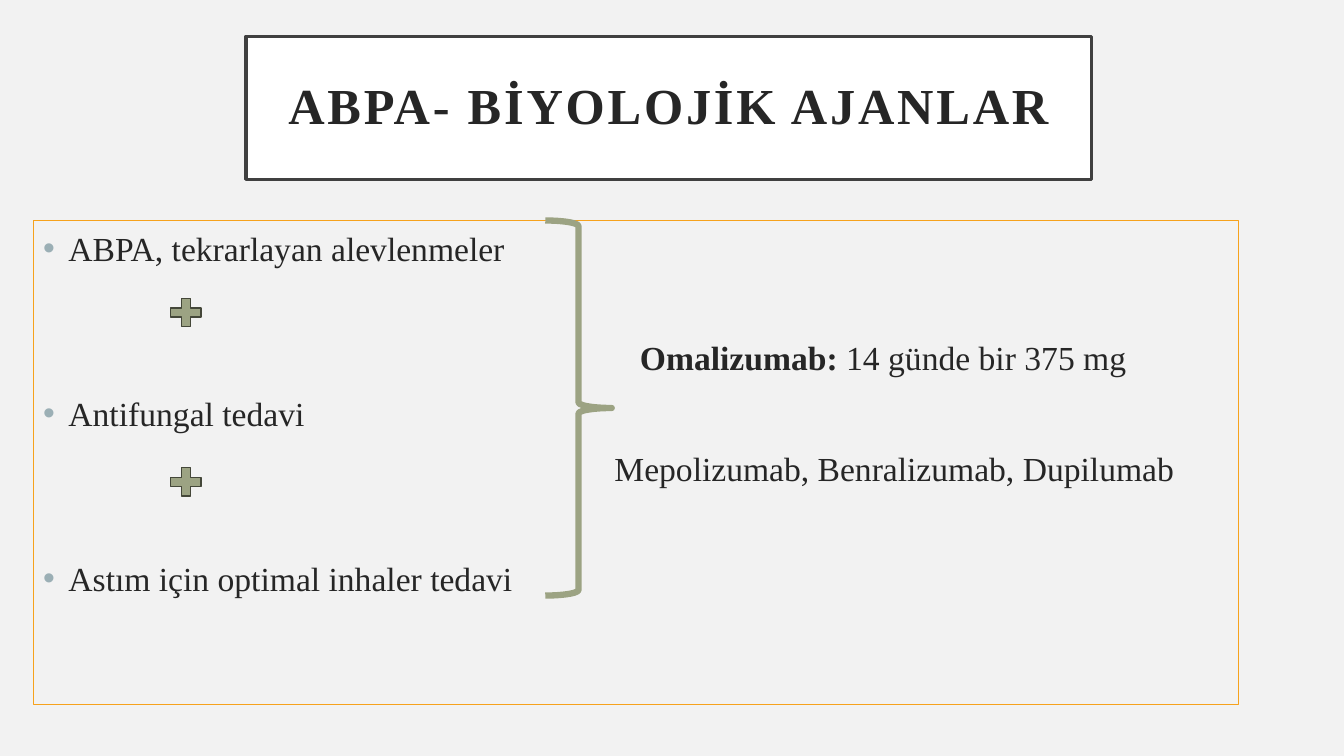
from lxml.etree import SubElement
from pptx import Presentation
from pptx.dml.color import RGBColor
from pptx.enum.shapes import MSO_SHAPE as SHAPE
from pptx.enum.text import MSO_ANCHOR as ANCHOR, PP_ALIGN as ALIGN
from pptx.oxml.ns import qn
from pptx.util import Pt

FONT = "Times New Roman"
COLORS = {
    "background": "F2F2F2", "white": "FFFFFF", "frame": "404040",
    "text": "262626", "orange": "F6A21D", "bullet": "9BAFB5",
    "sage": "9CA383", "olive": "444739",
}


def color(name):
    return RGBColor.from_string(COLORS[name])


def add_shape(s, kind, box, line, weight, fill=None):
    sp = s.shapes.add_shape(kind, *map(Pt, box))
    sp.shadow.inherit = False
    if fill:
        sp.fill.solid()
        sp.fill.fore_color.rgb = color(fill)
    else:
        sp.fill.background()
    sp.line.color.rgb = color(line)
    sp.line.width = Pt(weight)
    return sp


def set_frame(sp, insets, anchor=ANCHOR.TOP):
    tf = sp.text_frame
    tf.word_wrap = True
    tf.vertical_anchor = anchor
    tf.margin_left, tf.margin_top, tf.margin_right, tf.margin_bottom = map(Pt, insets)
    return tf


def add_paragraph(tf, first, before=0, align=ALIGN.LEFT):
    p = tf.paragraphs[0] if first else tf.add_paragraph()
    p.alignment = align
    p.space_before = Pt(0 if first else before)
    return p


def add_run(p, text, size=24, bold=False):
    r = p.add_run()
    r.text = text
    r.font.name = FONT
    r.font.size = Pt(size)
    r.font.bold = bold
    r.font.color.rgb = color("text")
    return r


def indent(p, left, first_line):
    pPr = p._p.get_or_add_pPr()
    pPr.set("marL", str(Pt(left)))
    pPr.set("indent", str(Pt(first_line)))
    return pPr


def add_bullet(p):
    pPr = indent(p, 18, -18)
    clr = SubElement(pPr, qn("a:buClr"))
    SubElement(clr, qn("a:srgbClr")).set("val", COLORS["bullet"])
    SubElement(pPr, qn("a:buFont")).set("typeface", "Arial")
    SubElement(pPr, qn("a:buChar")).set("char", "•")


def add_title(s, text):
    sp = add_shape(s, SHAPE.RECTANGLE, (175.7, 25.9, 604.1, 102.2), "frame", 2.5, "white")
    p = add_paragraph(set_frame(sp, [14.4] * 4, ANCHOR.MIDDLE), True, align=ALIGN.CENTER)
    p.line_spacing = 0.9
    r = add_run(p, text, 36, True)
    r._r.get_or_add_rPr().set("spc", "200")


def add_criteria(s, items):
    sp = add_shape(s, SHAPE.RECTANGLE, (23.8, 157.5, 861.1, 345.6), "orange", 0.75)
    tf = set_frame(sp, (7.2, 5.5, 7.2, 3.6))
    for i, text in enumerate(items):
        p = add_paragraph(tf, i == 0, before=88.8)
        add_bullet(p)
        add_run(p, text)


def add_agents(s, lines):
    sp = s.shapes.add_textbox(*map(Pt, (438.9, 240.7, 430, 106)))
    tf = set_frame(sp, [0] * 4)
    for i, (left, runs) in enumerate(lines):
        p = add_paragraph(tf, i == 0, before=50.1)
        indent(p, left, 0)
        for text, bold in runs:
            add_run(p, text, bold=bold)


def main():
    prs = Presentation()
    prs.slide_width, prs.slide_height = Pt(960), Pt(540)
    s = prs.slides.add_slide(prs.slide_layouts[6])
    s.background.fill.solid()
    s.background.fill.fore_color.rgb = color("background")

    add_title(s, "ABPA- BİYOLOJİK AJANLAR")
    add_criteria(s, [
        "ABPA, tekrarlayan alevlenmeler",
        "Antifungal tedavi",
        "Astım için optimal inhaler tedavi",
    ])
    add_agents(s, [
        (18.2, [("Omalizumab: ", True), ("14 günde bir 375 mg", False)]),
        (0, [("Mepolizumab, Benralizumab, Dupilumab", False)]),
    ])
    add_shape(s, SHAPE.RIGHT_BRACE, (389.5, 157.5, 47.5, 267.9), "sage", 4.5)
    for top in (209.5, 330.5):
        add_shape(s, SHAPE.MATH_PLUS, (118.1, top, 29.5, 27.4), "olive", 1, "sage")

    prs.save("out.pptx")


if __name__ == "__main__":
    main()
